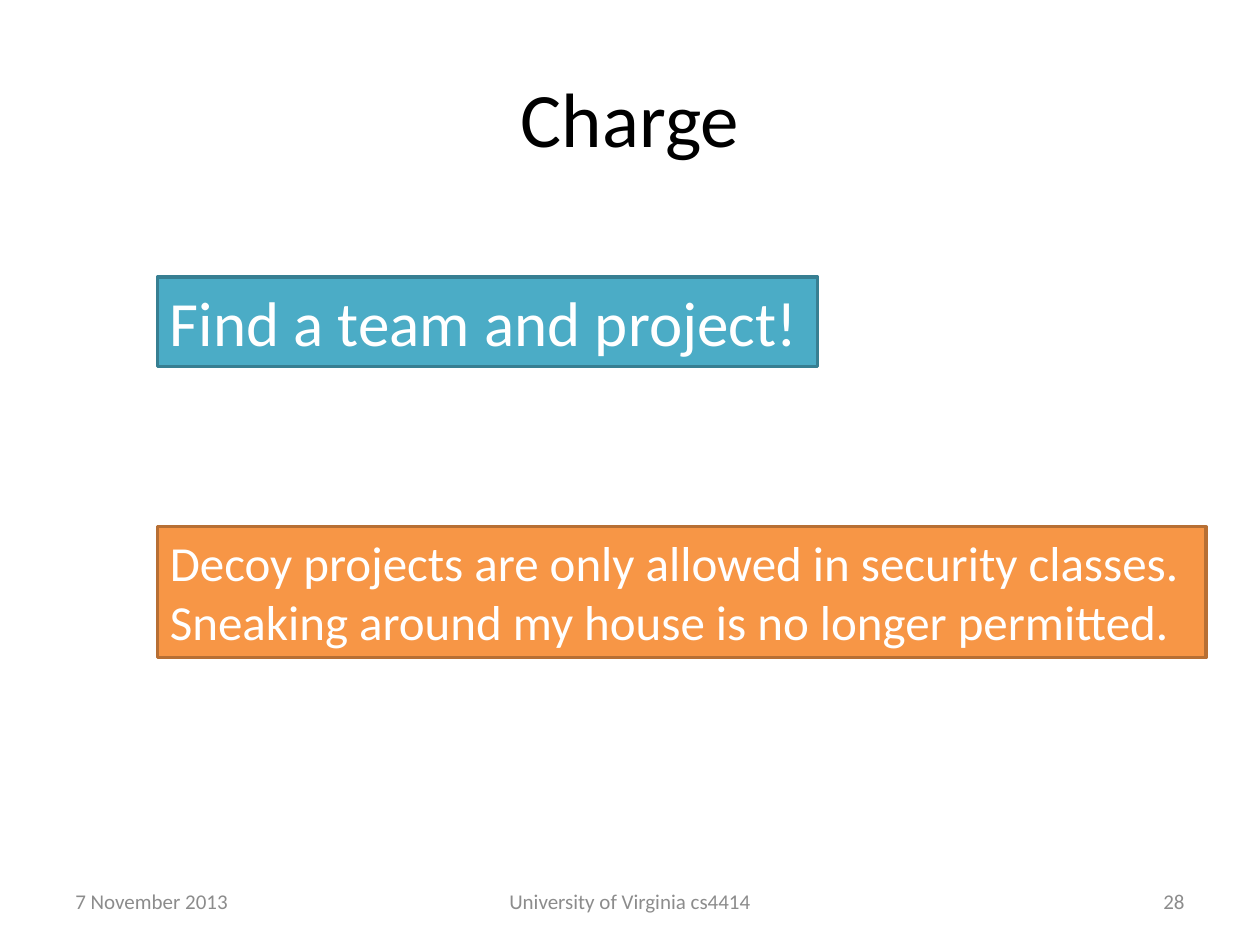
from pptx import Presentation
from pptx.dml.color import RGBColor
from pptx.enum.shapes import MSO_SHAPE
from pptx.enum.text import MSO_ANCHOR, MSO_AUTO_SIZE, PP_ALIGN
from pptx.util import Inches, Pt

RECTANGLE = MSO_SHAPE.RECTANGLE
TOP, MIDDLE = MSO_ANCHOR.TOP, MSO_ANCHOR.MIDDLE
LEFT, CENTER, RIGHT = PP_ALIGN.LEFT, PP_ALIGN.CENTER, PP_ALIGN.RIGHT
GROW = MSO_AUTO_SIZE.SHAPE_TO_FIT_TEXT
FIXED = MSO_AUTO_SIZE.NONE


def color(value):
    """Turn a hex string into a colour."""
    return RGBColor.from_string(value)


def apply_format(target, values):
    """Set each named attribute on the target."""
    for name, value in values.items():
        setattr(target, name, value)


def write_text(shape, lines, size, ink, align, frame_format):
    """Fill a shape with one paragraph per line."""
    frame = shape.text_frame
    apply_format(frame, frame_format)
    for index, line in enumerate(lines):
        para = frame.paragraphs[0] if index == 0 else frame.add_paragraph()
        para.alignment = align
        span = para.add_run()
        span.text = line
        apply_format(span.font, {"name": "Calibri", "size": Pt(size)})
        span.font.color.rgb = color(ink)


def add_label(page, box, text, size, ink, align):
    """Place one vertically centred line of text in the box."""
    label = page.shapes.add_textbox(*map(Inches, box))
    frame_format = {"word_wrap": True, "auto_size": FIXED, "vertical_anchor": MIDDLE}
    write_text(label, [text], size, ink, align, frame_format)


def add_footer(page, box, date, course, number):
    """Place the date, course and page number across the box."""
    left, top, width, height = box
    side, middle = 2.33, 3.17
    parts = [
        (left, side, date, LEFT),
        (left + (width - middle) / 2, middle, course, CENTER),
        (left + width - side, side, number, RIGHT),
    ]
    for start, span_width, text, align in parts:
        add_label(page, (start, top, span_width, height), text, 12, "8C8C8C", align)


def add_banner(page, box, lines, size, fill, edge):
    """Place a filled and outlined rectangle holding the lines."""
    banner = page.shapes.add_shape(RECTANGLE, *map(Inches, box))
    banner.shadow.inherit = False
    banner.fill.solid()
    banner.fill.fore_color.rgb = color(fill)
    banner.line.color.rgb = color(edge)
    banner.line.width = Pt(2)
    frame_format = {"word_wrap": False, "auto_size": GROW, "vertical_anchor": TOP}
    write_text(banner, lines, size, "FFFFFF", LEFT, frame_format)


def main():
    """Build and save the deck."""
    deck = Presentation()
    apply_format(deck, {"slide_width": Inches(10), "slide_height": Inches(7.5)})
    page = deck.slides.add_slide(deck.slide_layouts[6])
    add_label(page, (0.5, 0.3, 9, 1.25), "Charge", 44, "000000", CENTER)
    add_footer(page, (0.5, 6.95, 9, 0.4),
               "7 November 2013", "University of Virginia cs4414", "28")
    add_banner(page, (1.25, 2.2, 5.24, 0.71), ["Find a team and project!"],
               36, "4BACC6", "377F92")
    add_banner(page, (1.25, 4.18, 8.32, 1.04),
               ["Decoy projects are only allowed in security classes.",
                "Sneaking around my house is no longer permitted."],
               28, "F79646", "B76F34")
    deck.save("out.pptx")


if __name__ == "__main__":
    main()
